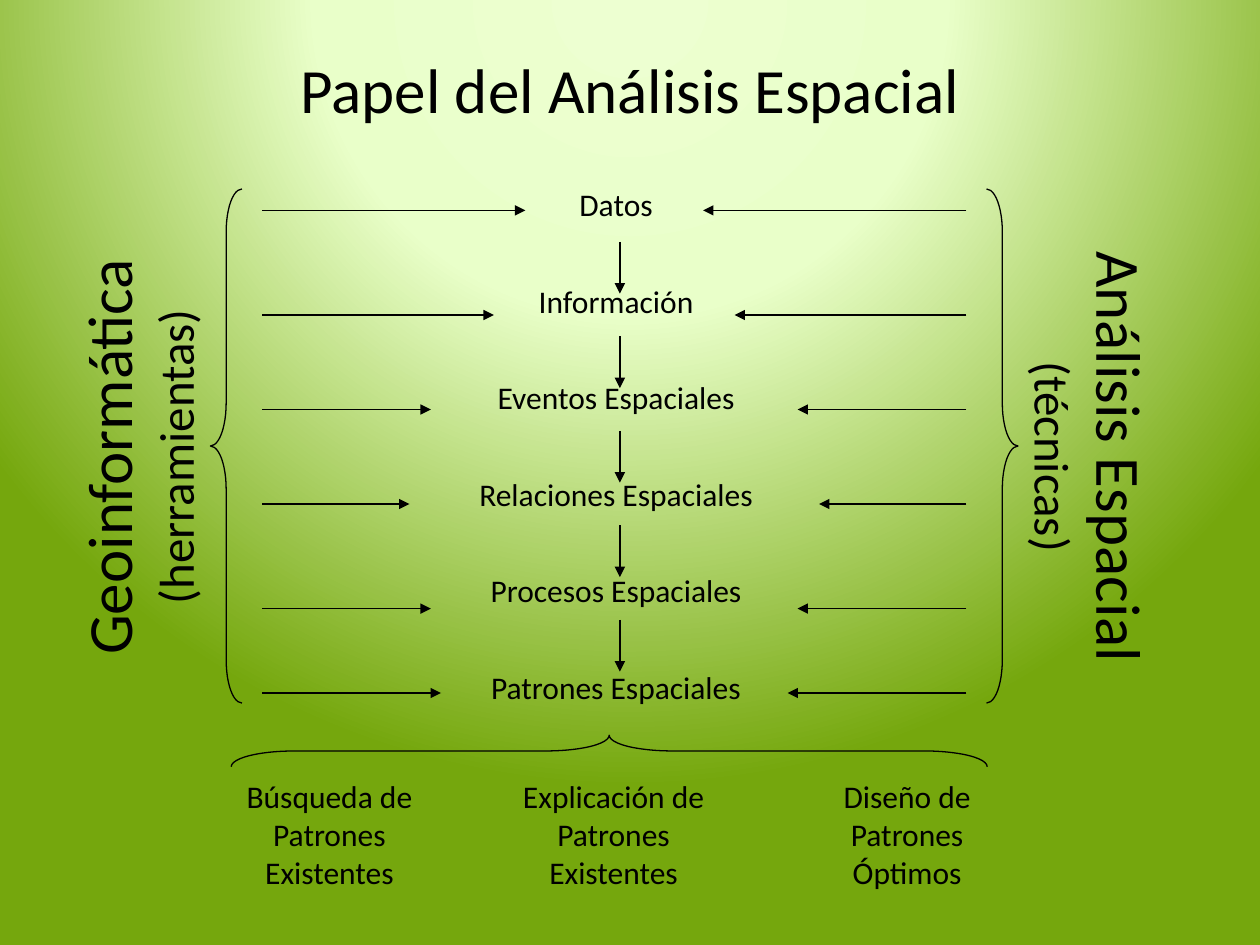
from lxml.etree import SubElement
from pptx import Presentation
from pptx.dml.color import RGBColor
from pptx.enum.shapes import MSO_CONNECTOR, MSO_SHAPE
from pptx.enum.text import MSO_ANCHOR, MSO_AUTO_SIZE, PP_ALIGN
from pptx.oxml import parse_xml
from pptx.oxml.ns import nsdecls, qn
from pptx.util import Inches, Pt

TITLE = "Papel del Análisis Espacial"
STAGES = [
    ("Datos", 1.67, 4.17, 5.58),
    ("Información", 2.5, 3.92, 5.83),
    ("Eventos Espaciales", 3.25, 3.42, 6.33),
    ("Relaciones Espaciales", 4, 3.25, 6.5),
    ("Procesos Espaciales", 4.83, 3.42, 6.33),
    ("Patrones Espaciales", 5.5, 3.5, 6.25),
]
SIDES = [
    (("Geoinformática", "(herramientas)"), -0.96, 4.09, 270),
    (("Análisis Espacial", "(técnicas)"), 6.54, 4.25, 90),
]
OUTCOMES = [
    (("Búsqueda de Patrones", "Existentes"), 1.73, 1.77),
    (("Explicación de Patrones Existentes",), 3.82, 2.1),
    (("Diseño de Patrones Óptimos",), 6.4, 1.6),
]
BRACES = [
    (MSO_SHAPE.LEFT_BRACE, 1.67, 1.5, 4.08, 0, 1.36),
    (MSO_SHAPE.RIGHT_BRACE, 7.83, 1.5, 4.08, 0, 1.36),
    (MSO_SHAPE.LEFT_BRACE, 4.71, 2.96, 6, 90, 2),
]
GLOW = [(0, "EDFFD1"), (40, "E9FFC9"), (100, "75A70D")]
INK = "000000"
WIDTH, HEIGHT = 10, 7.5
LABEL_AXIS, LABEL_TOP, LABEL_STEP, LABEL_WIDTH = 4.89, 1.42, 0.766, 3.16
FLOW_AXIS, FLOW_TOP, FLOW_STEP, FLOW_LENGTH = 4.92, 1.92, 0.75, 0.41
ARROWS_LEFT, ARROWS_RIGHT = 2.08, 7.67


def color(value):
    return RGBColor.from_string(value)


def write(frame, lines, sizes=(18,), wrap=True, anchor=MSO_ANCHOR.TOP):
    frame.word_wrap = wrap
    frame.vertical_anchor = anchor
    for index, line in enumerate(lines):
        paragraph = frame.paragraphs[0] if index == 0 else frame.add_paragraph()
        paragraph.alignment = PP_ALIGN.CENTER
        run = paragraph.add_run()
        run.text = line
        run.font.name = "Calibri"
        run.font.size = Pt(sizes[min(index, len(sizes) - 1)])
        run.font.color.rgb = color(INK)


def add_label(slide, lines, left, top, width, height, rotation=0, **style):
    label = slide.shapes.add_textbox(*map(Inches, (left, top, width, height)))
    label.rotation = rotation
    write(label.text_frame, lines, **style)
    label.text_frame.auto_size = MSO_AUTO_SIZE.SHAPE_TO_FIT_TEXT


def ink_line(line):
    line.color.rgb = color(INK)
    line.width = Pt(0.75)


def add_arrow(slide, *ends):
    arrow = slide.shapes.add_connector(MSO_CONNECTOR.STRAIGHT, *map(Inches, ends))
    ink_line(arrow.line)
    SubElement(arrow.line._get_or_add_ln(), qn("a:tailEnd"), type="triangle")
    SubElement(arrow._element.spPr, qn("a:effectLst"))


def add_brace(slide, kind, left, top, length, rotation, curl):
    brace = slide.shapes.add_shape(kind, *map(Inches, (left, top, 0.25, length)))
    brace.rotation = rotation
    brace.adjustments[0] = curl
    brace.shadow.inherit = False
    brace.fill.background()
    ink_line(brace.line)


def paint_background(slide):
    fill = slide.background.fill
    fill.solid()
    fill.fore_color.rgb = color(INK)
    stops = "".join(
        f'<a:gs pos="{share * 1000}"><a:srgbClr val="{tint}"/></a:gs>' for share, tint in GLOW
    )
    gradient = parse_xml(
        f'<a:gradFill {nsdecls("a")} rotWithShape="1"><a:gsLst>{stops}</a:gsLst>'
        '<a:path path="circle"><a:fillToRect l="50000" t="-80000" r="50000" b="180000"/>'
        "</a:path></a:gradFill>"
    )
    solid = slide._element.find(".//" + qn("p:bgPr")).find(qn("a:solidFill"))
    solid.getparent().replace(solid, gradient)


def main():
    deck = Presentation()
    deck.slide_width, deck.slide_height = Inches(WIDTH), Inches(HEIGHT)
    slide = deck.slides.add_slide(deck.slide_layouts[5])
    paint_background(slide)

    title = slide.shapes.title
    title.left, title.top, title.width, title.height = map(Inches, (0.75, 0.08, 8.5, 1.25))
    write(title.text_frame, [TITLE], sizes=(36,), anchor=MSO_ANCHOR.MIDDLE)

    for lines, left, width, rotation in SIDES:
        add_label(slide, lines, left, 3.04, width, 1.17, rotation, sizes=(36, 28))

    for row, (stage, level, left_tip, right_tip) in enumerate(STAGES):
        add_label(slide, [stage], LABEL_AXIS - LABEL_WIDTH / 2, LABEL_TOP + row * LABEL_STEP,
                  LABEL_WIDTH, 0.5, wrap=False)
        add_arrow(slide, ARROWS_LEFT, level, left_tip, level)
        add_arrow(slide, ARROWS_RIGHT, level, right_tip, level)

    for row in range(len(STAGES) - 1):
        top = FLOW_TOP + row * FLOW_STEP
        add_arrow(slide, FLOW_AXIS, top, FLOW_AXIS, top + FLOW_LENGTH)

    for brace in BRACES:
        add_brace(slide, *brace)

    for lines, left, width in OUTCOMES:
        add_label(slide, lines, left, 6.12, width, 1.3)

    deck.save("out.pptx")


if __name__ == "__main__":
    main()
